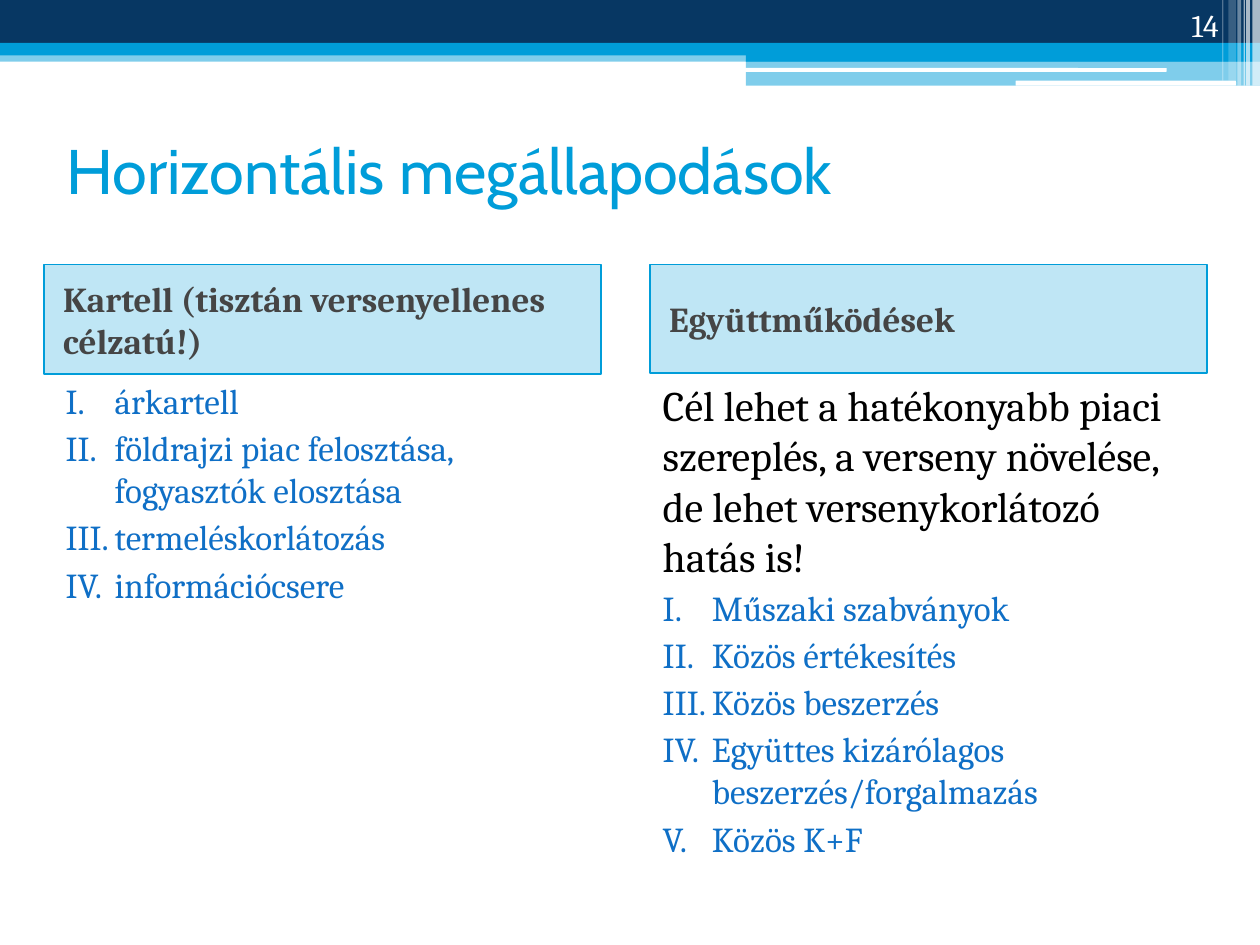
"""Build a slide comparing cartels with horizontal cooperation agreements."""
from dataclasses import dataclass

from lxml.etree import SubElement
from pptx import Presentation
from pptx.dml.color import RGBColor
from pptx.enum.shapes import MSO_SHAPE as Shape
from pptx.enum.text import MSO_ANCHOR as Anchor, MSO_AUTO_SIZE as AutoSize, PP_ALIGN as Align
from pptx.oxml.ns import qn
from pptx.util import Inches, Pt


@dataclass(frozen=True)
class Theme:
    heading_font: str = "Cabin"
    body_font: str = "Cambria"
    navy: str = "073763"
    cyan: str = "009DD9"
    blue: str = "0F6FC6"
    gray: str = "454545"
    black: str = "000000"
    white: str = "FFFFFF"
    title_size: int = 36
    intro_size: int = 24
    body_size: int = 20
    number_size: int = 18


THEME = Theme()
TITLE = "Horizontális megállapodások"
PAGE_NUMBER = "14"
COLUMNS = [
    {
        "heading": "Kartell (tisztán versenyellenes célzatú!)",
        "heading_box": (0.35, 2.1, 4.42, 0.87),
        "list_box": (0.42, 2.96, 4.42, 4.25),
        "intro": None,
        "items": [
            "árkartell",
            "földrajzi piac felosztása, fogyasztók elosztása",
            "termeléskorlátozás",
            "információcsere",
        ],
    },
    {
        "heading": "Együttműködések",
        "heading_box": (5.16, 2.1, 4.42, 0.86),
        "list_box": (5.16, 2.96, 4.42, 4.25),
        "intro": "Cél lehet a hatékonyabb piaci szereplés, a verseny növelése, "
                 "de lehet versenykorlátozó hatás is!",
        "items": [
            "Műszaki szabványok",
            "Közös értékesítés",
            "Közös beszerzés",
            "Együttes kizárólagos beszerzés/forgalmazás",
            "Közös K+F",
        ],
    },
]
BANDS = [
    ((0, 0.4, 10, 0.09), THEME.cyan, 50),
    ((0, 0, 10, 0.34), THEME.navy, 100),
    ((0, 0.34, 10, 0.1), THEME.cyan, 100),
    ((5.92, 0.39, 4.08, 0.1), THEME.cyan, 100),
    ((5.92, 0.48, 4.08, 0.2), THEME.cyan, 50),
]
HIGHLIGHTS = [(5.91, 0.54, 3.35, 0.03), (8.06, 0.64, 1.75, 0.04)]
STRIPES = [
    (9.94, 0.06, 0.68, 65),
    (9.89, 0.03, 0.68, 65),
    (9.87, 0.01, 0.68, 60),
    (9.82, 0.03, 0.68, 40),
    (9.75, 0.06, 0.64, 20),
    (9.7, 0.01, 0.64, 30),
]


def paint(shape, color, opacity=100):
    shape.fill.solid()
    shape.fill.fore_color.rgb = RGBColor.from_string(color)
    if opacity < 100:
        tint = shape.element.spPr.find(qn("a:solidFill"))[0]
        SubElement(tint, qn("a:alpha"), val=str(opacity * 1000))


def add_band(slide, kind, box, color, opacity=100):
    band = slide.shapes.add_shape(kind, *map(Inches, box))
    band.shadow.inherit = False
    band.line.fill.background()
    paint(band, color, opacity)


def place(holder, box, anchor):
    holder.element.getparent().append(holder.element)
    holder.left, holder.top, holder.width, holder.height = map(Inches, box)
    frame = holder.text_frame
    frame.word_wrap = True
    frame.auto_size = AutoSize.NONE
    frame.vertical_anchor = anchor
    return frame


def write(para, text, size, color, font=THEME.body_font, bold=False, align=Align.LEFT):
    para.text = text
    para.alignment = align
    para.font.name = font
    para.font.size = Pt(size)
    para.font.bold = bold
    para.font.color.rgb = RGBColor.from_string(color)


def set_list_style(para, indent=0.0, numbered=False):
    para.space_before = Pt(3)
    props = para._p.get_or_add_pPr()
    props.set("marL", str(Inches(indent)))
    props.set("indent", str(Inches(-indent if numbered else 0)))
    if numbered:
        SubElement(props, qn("a:buFont"), typeface="+mj-lt")
        SubElement(props, qn("a:buAutoNum"), type="romanUcPeriod")
    else:
        SubElement(props, qn("a:buNone"))
    defaults = props.find(qn("a:defRPr"))
    if defaults is not None:
        props.append(defaults)


def fill_heading(holder, column):
    para = place(holder, column["heading_box"], Anchor.MIDDLE).paragraphs[0]
    paint(holder, THEME.cyan, 25)
    holder.line.color.rgb = RGBColor.from_string(THEME.cyan)
    holder.line.width = Pt(1)
    write(para, column["heading"], THEME.body_size, THEME.gray, bold=True)
    set_list_style(para, 0.05)


def fill_list(holder, column):
    frame = place(holder, column["list_box"], Anchor.TOP)
    para = frame.paragraphs[0]
    if column["intro"]:
        write(para, column["intro"], THEME.intro_size, THEME.black)
        set_list_style(para)
        para = frame.add_paragraph()
    for position, item in enumerate(column["items"]):
        if position:
            para = frame.add_paragraph()
        para.level = 3
        write(para, item, THEME.body_size, THEME.blue)
        set_list_style(para, 0.39, numbered=True)


def main():
    deck = Presentation()
    deck.slide_width, deck.slide_height = Inches(10), Inches(7.5)
    slide = deck.slides.add_slide(deck.slide_layouts.get_by_name("Comparison"))
    title, *holders = list(slide.placeholders)

    for box, color, opacity in BANDS:
        add_band(slide, Shape.RECTANGLE, box, color, opacity)
    for box in HIGHLIGHTS:
        add_band(slide, Shape.ROUNDED_RECTANGLE, box, THEME.white)
    for left, width, height, opacity in STRIPES:
        add_band(slide, Shape.RECTANGLE, (left, 0, width, height), THEME.white, opacity)

    frame = place(title, (0.43, 0.76, 9.17, 1.17), Anchor.MIDDLE)
    write(frame.paragraphs[0], TITLE, THEME.title_size, THEME.cyan, THEME.heading_font)
    for holder, column in zip(holders[::2], COLUMNS):
        fill_heading(holder, column)
    for holder, column in zip(holders[1::2], COLUMNS):
        fill_list(holder, column)

    number = slide.shapes.add_textbox(0, 0, 0, 0)
    frame = place(number, (8.94, 0, 0.83, 0.4), Anchor.BOTTOM)
    write(frame.paragraphs[0], PAGE_NUMBER, THEME.number_size, THEME.white, align=Align.RIGHT)
    deck.save("out.pptx")


if __name__ == "__main__":
    main()
